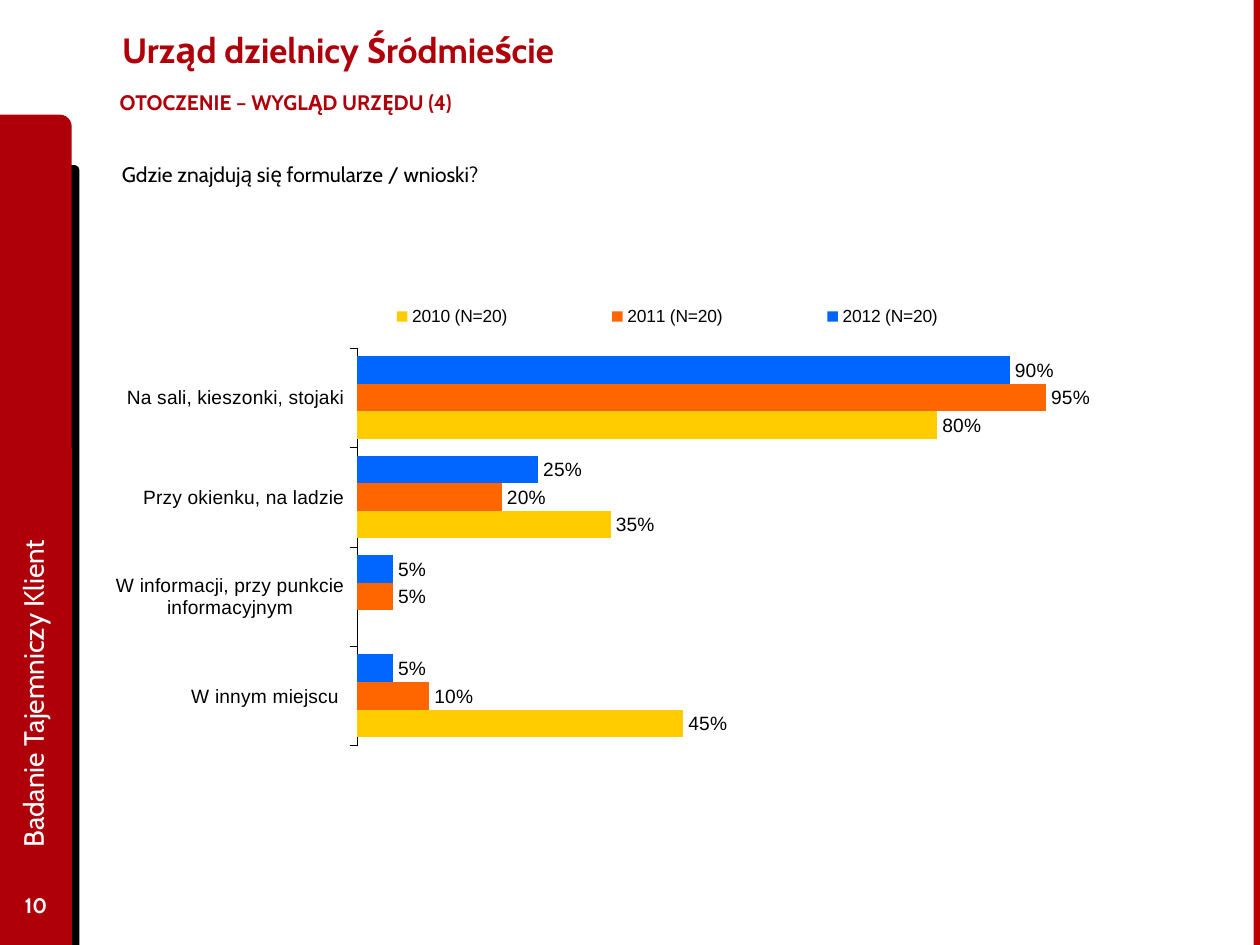
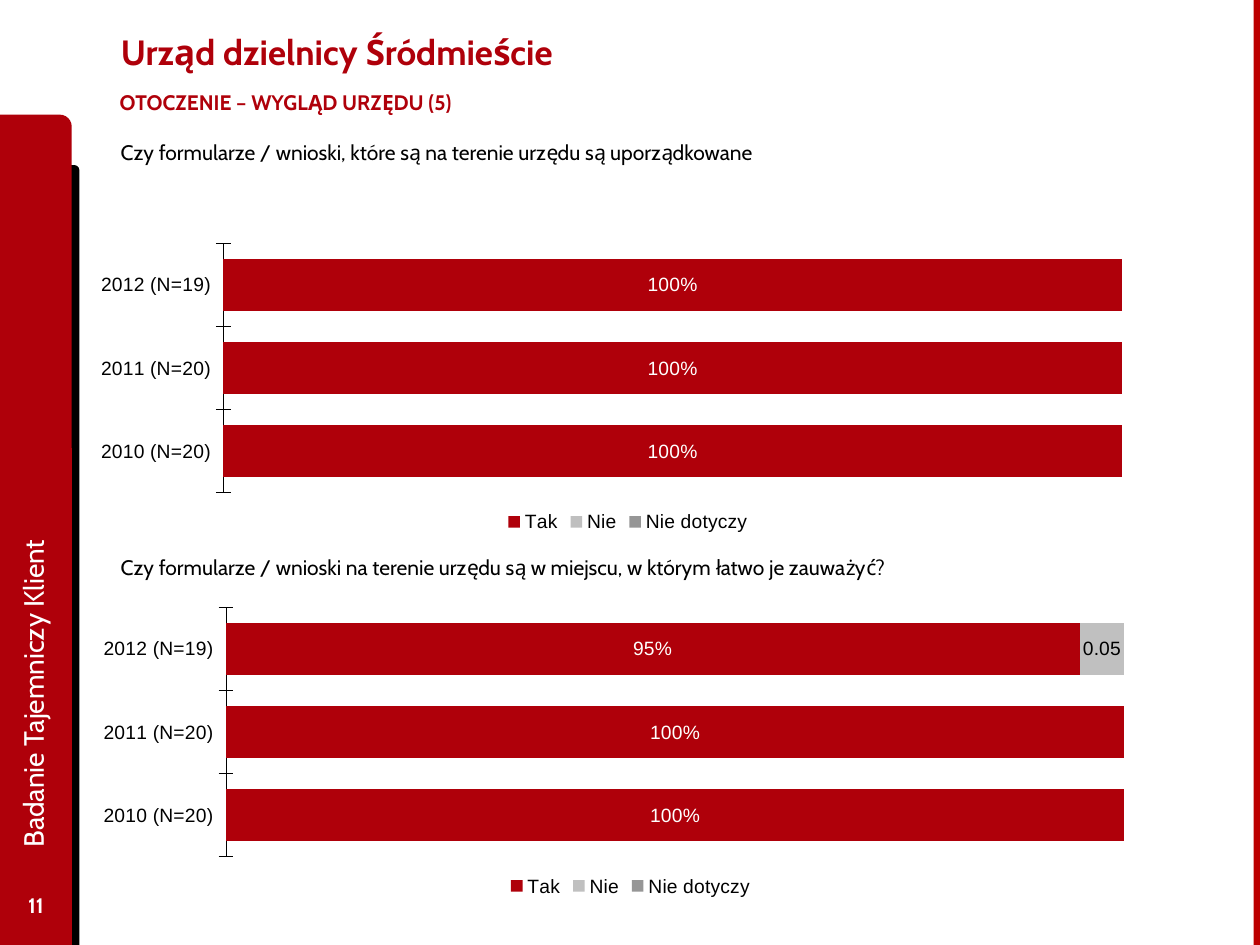
from lxml import etree
from pptx import Presentation
from pptx.chart.data import CategoryChartData
from pptx.dml.color import RGBColor
from pptx.enum import chart as ch, shapes, text
from pptx.oxml import ns
from pptx.util import Inches, Pt

RED, EDGE_RED = "AF000A", "BD0000"
BLACK, WHITE = "000000", "FFFFFF"
YELLOW, ORANGE, BLUE = "FFCC00", "FF6600", "0066FF"
DARK_GREY = "969696"
HEAD_FONT, CHART_FONT = "Cabin", "Arial"
YEARS = ["2012 (N=19)", "2011 (N=20)", "2010 (N=20)"]
ANSWERS_PLOT = (0.119, 0.004, 0.846, 0.843)


def paint(colored, color):
    """Give a fill a solid colour, or set the colour of a font."""
    if hasattr(colored, "solid"):
        colored.solid()
        colored.fore_color.rgb = RGBColor.from_string(color)
    else:
        colored.color.rgb = RGBColor.from_string(color)


def style_font(font, size, color=BLACK, name=CHART_FONT, bold=False):
    font.size, font.name, font.bold = Pt(size), name, bold
    paint(font, color)


def write(holder, words, size, color=BLACK, bold=False,
          anchor=text.MSO_ANCHOR.TOP, align=text.PP_ALIGN.LEFT):
    frame = holder.text_frame
    frame.word_wrap = True
    frame.auto_size = text.MSO_AUTO_SIZE.NONE
    frame.vertical_anchor = anchor
    paragraph = frame.paragraphs[0]
    paragraph.text = words
    paragraph.alignment = align
    style_font(paragraph.font, size, color, HEAD_FONT, bold)
    return frame


def add_text(slide, box, words, size, **style):
    holder = slide.shapes.add_textbox(*map(Inches, box))
    write(holder, words, size, **style)
    return holder


def add_band(slide, preset, box, color):
    band = slide.shapes.add_shape(preset, *map(Inches, box))
    band.shadow.inherit = False
    paint(band.fill, color)
    band.line.fill.background()


def add_frame(slide, number):
    """Side band with study name and page number, and the right edge."""
    rounded = shapes.MSO_SHAPE.ROUND_1_RECTANGLE
    add_band(slide, rounded, (0.39, 1.31, 0.24, 6.19), BLACK)
    add_band(slide, rounded, (0, 0.91, 0.57, 6.59), RED)
    add_band(slide, shapes.MSO_SHAPE.RECTANGLE, (9.95, 0, 0.05, 7.5), EDGE_RED)
    middle = text.MSO_ANCHOR.MIDDLE
    study = add_text(slide, (-2.62, 3.69, 5.76, 0.51), "Badanie Tajemniczy Klient",
                     16, color=WHITE, anchor=middle)
    study.rotation = 270
    add_text(slide, (0, 6.98, 0.57, 0.4), str(number), 12, color=WHITE, bold=True,
             anchor=middle, align=text.PP_ALIGN.CENTER)


def add_survey_slide(prs, number, part, title_at):
    slide = prs.slides.add_slide(prs.slide_layouts[5])
    add_frame(slide, number)
    title = slide.shapes.title
    title.left, title.top = map(Inches, title_at)
    title.width, title.height = Inches(7.77), Inches(0.72)
    write(title, "Urząd dzielnicy Śródmieście", 20, RED, True, text.MSO_ANCHOR.MIDDLE)
    section = add_text(slide, (0.75, 0.66, 3.85, 0.33),
                       f"OTOCZENIE – WYGLĄD URZĘDU ({part})", 12, color=RED, bold=True)
    section.text_frame.margin_left = section.text_frame.margin_right = Inches(0.2)
    return slide


def set_layout(part, box, inner=False):
    """Place a plot area or legend by fractions of the chart."""
    for old in part.findall(ns.qn("c:layout")):
        part.remove(old)
    layout = etree.Element(ns.qn("c:layout"))
    manual = etree.SubElement(layout, ns.qn("c:manualLayout"))
    settings = [("layoutTarget", "inner")] if inner else []
    settings += [("xMode", "edge"), ("yMode", "edge"), *zip("xywh", box)]
    for tag, value in settings:
        etree.SubElement(manual, ns.qn(f"c:{tag}")).set("val", str(value))
    part.insert(0 if inner else 1, layout)


def add_bars(slide, box, kind, categories, series, plot_box, legend_at):
    """Series are (name, values, fill, label colour, label format)."""
    data = CategoryChartData()
    data.categories = categories
    for name, values, *_ in series:
        data.add_series(name, values)
    chart = slide.shapes.add_chart(kind, *map(Inches, box), data).chart
    chart.has_title = False
    style_font(chart.font, 11)

    plot = chart.plots[0]
    plot.gap_width, plot.vary_by_categories = 60, False
    stacked = kind == ch.XL_CHART_TYPE.BAR_STACKED
    plot.overlap = 100 if stacked else 0
    spot = ch.XL_LABEL_POSITION
    for bars, (_, _, fill, label_color, label_format) in zip(plot.series, series):
        paint(bars.format.fill, fill)
        labels = bars.data_labels
        labels.show_value = True
        labels.number_format, labels.number_format_is_linked = label_format, False
        labels.position = spot.CENTER if stacked else spot.OUTSIDE_END
        style_font(labels.font, 11, label_color)

    names = chart.category_axis
    names.reverse_order = True
    names.major_tick_mark = ch.XL_TICK_MARK.CROSS if stacked else ch.XL_TICK_MARK.OUTSIDE
    names.format.line.width = Pt(0.25)
    paint(names.format.line.fill, BLACK)
    style_font(names.tick_labels.font, 11)
    shares = chart.value_axis
    shares.minimum_scale, shares.maximum_scale, shares.major_unit = 0, 1, 0.2
    shares.has_major_gridlines = False
    shares.visible = False

    chart.has_legend = True
    chart.legend.position = legend_at
    chart.legend.include_in_layout = False
    plot_area = chart.element.find(".//" + ns.qn("c:plotArea"))
    set_layout(plot_area, plot_box, inner=True)
    return chart


def add_question(slide, box, question):
    add_text(slide, box, question, 12)


def build_places_slide(prs):
    slide = add_survey_slide(prs, 10, 4, (0.87, 0.03))
    add_question(slide, (0.87, 1.23, 3.94, 0.3), "Gdzie znajdują się formularze / wnioski?")
    places = ["Na sali, kieszonki, stojaki", "Przy okienku, na ladzie",
              "W informacji, przy punkcie informacyjnym", "W innym miejscu "]
    years = [("2012 (N=20)", (0.9, 0.25, 0.05, 0.05), BLUE, BLACK, "0%"),
             ("2011 (N=20)", (0.95, 0.2, 0.05, 0.1), ORANGE, BLACK, "0%"),
             ("2010 (N=20)", (0.8, 0.35, None, 0.45), YELLOW, BLACK, "0%")]
    chart = add_bars(slide, (0.92, 2.37, 9.07, 3.55), ch.XL_CHART_TYPE.BAR_CLUSTERED,
                     places, years, (0.207, 0.113, 0.638, 0.89),
                     ch.XL_LEGEND_POSITION.TOP)
    style_font(chart.legend.font, 10)
    set_layout(chart.legend._element, (0.155, 0, 0.65, 0.08))


def add_answers(slide, box, yes, no, no_color):
    """Stacked shares of the three answers for every year."""
    answers = [("Tak", yes, RED, WHITE, "0%"),
               ("Nie", no, no_color, BLACK, "General"),
               ("Nie dotyczy", (None,) * 3, DARK_GREY, BLACK, "General")]
    chart = add_bars(slide, box, ch.XL_CHART_TYPE.BAR_STACKED, YEARS, answers,
                     ANSWERS_PLOT, ch.XL_LEGEND_POSITION.BOTTOM)
    style_font(chart.legend.font, 11)


def build_answers_slide(prs):
    slide = add_survey_slide(prs, 11, 5, (0.86, 0.05))
    add_question(slide, (0.86, 1.06, 5.83, 0.3),
                 "Czy formularze / wnioski, które są na terenie urzędu są uporządkowane")
    add_answers(slide, (0.77, 1.92, 8.43, 2.35), (1, 1, 1), (None,) * 3, "BFBFBF")
    add_question(slide, (0.86, 4.35, 7.87, 0.3),
                 "Czy formularze / wnioski na terenie urzędu są w miejscu, "
                 "w którym łatwo je zauważyć?")
    add_answers(slide, (0.79, 4.81, 8.43, 2.35), (0.95, 1, 1), (0.05, None, None), "C0C0C0")


def main():
    prs = Presentation()
    prs.slide_width, prs.slide_height = Inches(10), Inches(7.5)
    build_places_slide(prs)
    build_answers_slide(prs)
    prs.save("out.pptx")


if __name__ == "__main__":
    main()
